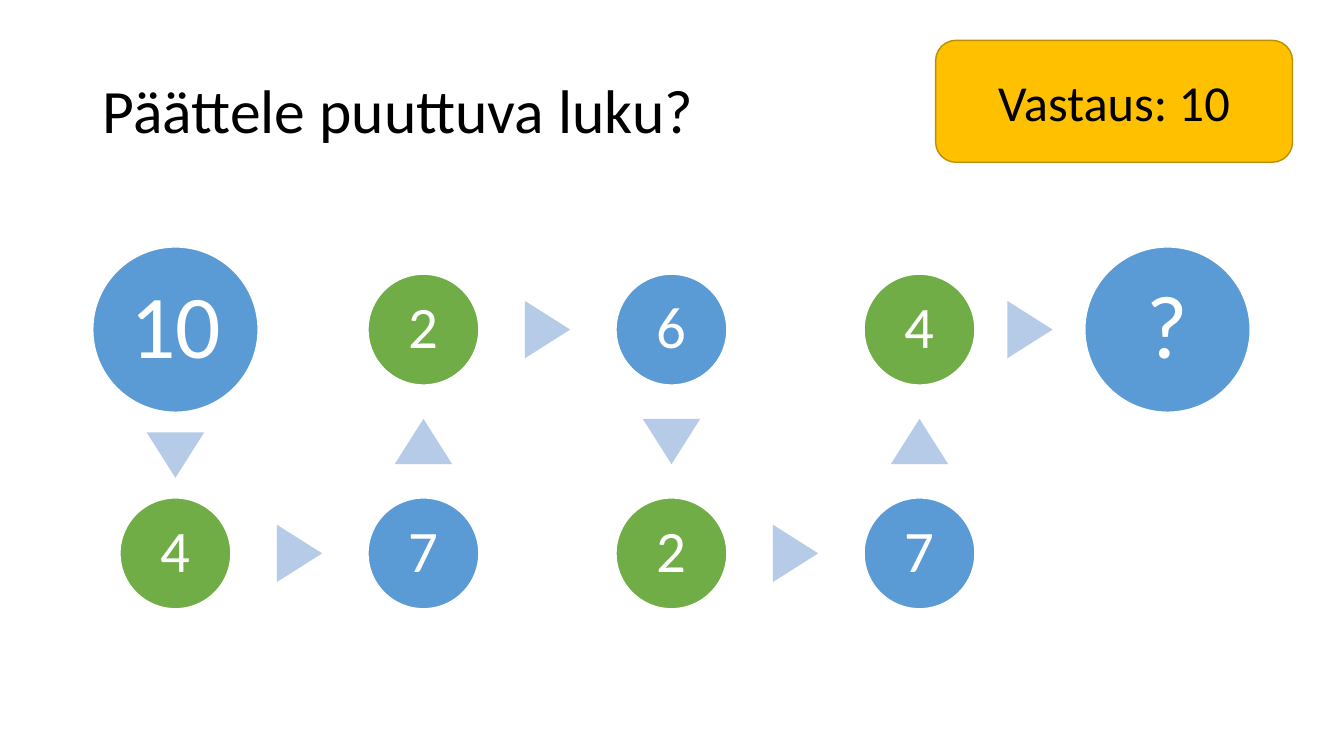
import pptx
import pptx.util
import pptx.dml.color
import pptx.enum.shapes
import pptx.enum.text

Inches = pptx.util.Inches
SHAPES = pptx.enum.shapes.MSO_SHAPE
ALIGN = pptx.enum.text.PP_ALIGN
COLORS = {
    "blue": "5B9BD5", "green": "70AD47", "arrow": "B5CBE7", "white": "FFFFFF",
    "black": "000000", "answer": "FFC000", "answer_line": "BD8E00",
}


def add_figure(kind, left, top, width, height, fill, line=None):
    figure = page.shapes.add_shape(
        kind, Inches(left), Inches(top), Inches(width), Inches(height))
    figure.shadow.inherit = False
    figure.fill.solid()
    figure.fill.fore_color.rgb = pptx.dml.color.RGBColor.from_string(COLORS[fill])
    if line:
        figure.line.color.rgb = pptx.dml.color.RGBColor.from_string(COLORS[line])
        figure.line.width = pptx.util.Pt(1)
    else:
        figure.line.fill.background()
    return figure


def write_text(box, text, size, color, align, spacing=0.9):
    frame = box.text_frame
    frame.text = text
    frame.word_wrap = True
    frame.vertical_anchor = pptx.enum.text.MSO_ANCHOR.MIDDLE
    para = frame.paragraphs[0]
    para.alignment = align
    para.line_spacing = spacing
    span = para.runs[0]
    span.font.name = "Calibri"
    span.font.size = pptx.util.Pt(size)
    span.font.color.rgb = pptx.dml.color.RGBColor.from_string(COLORS[color])


deck = pptx.Presentation()
deck.slide_width = Inches(13.33)
deck.slide_height = Inches(7.5)
page = deck.slides.add_slide(deck.slide_layouts[5])

# Title
title = page.shapes.title
title.left, title.top = Inches(0.92), Inches(0.4)
title.width, title.height = Inches(11.5), Inches(1.45)
write_text(title, "Päättele puuttuva luku?", 44, "black", ALIGN.LEFT)

# Number chain: text, column, row
chain = [
    ("10", 0, 0), ("4", 0, 1), ("7", 1, 1), ("2", 1, 0), ("6", 2, 0),
    ("2", 2, 1), ("7", 3, 1), ("4", 3, 0), ("?", 4, 0),
]
FIRST_X, COLUMN_STEP = 1.74, 2.46
ROW_Y = [3.27, 5.49]
BIG, SMALL = 1.64, 1.1
ARROW_WIDTH, ARROW_HEIGHT = 0.57, 0.45

previous = None
for index, (number, column, row) in enumerate(chain):
    is_end = index in (0, len(chain) - 1)
    size = BIG if is_end else SMALL
    x, y = FIRST_X + column * COLUMN_STEP, ROW_Y[row]

    # Arrow in the middle of the gap after the previous circle
    if previous:
        old_x, old_y, old_size = previous
        shift = (old_size - size) / 4
        if x > old_x:
            arrow_x, arrow_y, turn = (old_x + x) / 2 + shift, y, 90
        elif y > old_y:
            arrow_x, arrow_y, turn = x, (old_y + y) / 2 + shift, 180
        else:
            arrow_x, arrow_y, turn = x, (old_y + y) / 2 - shift, 0
        arrow = add_figure(
            SHAPES.ISOSCELES_TRIANGLE, arrow_x - ARROW_WIDTH / 2,
            arrow_y - ARROW_HEIGHT / 2, ARROW_WIDTH, ARROW_HEIGHT, "arrow")
        arrow.rotation = turn

    # Circle with its number
    circle = add_figure(SHAPES.OVAL, x - size / 2, y - size / 2, size, size,
                        "green" if index % 2 else "blue", "white")
    frame = circle.text_frame
    inset = Inches(0.09 if is_end else 0.06)
    frame.margin_left = frame.margin_right = inset
    frame.margin_top = frame.margin_bottom = inset
    write_text(circle, number, 64 if is_end else 42, "white", ALIGN.CENTER)
    previous = x, y, size

# Answer
answer = add_figure(SHAPES.ROUNDED_RECTANGLE, 9.28, 0.4, 3.54, 1.21,
                    "answer", "answer_line")
write_text(answer, "Vastaus: 10", 36, "black", ALIGN.CENTER, 1.0)

deck.save("out.pptx")
